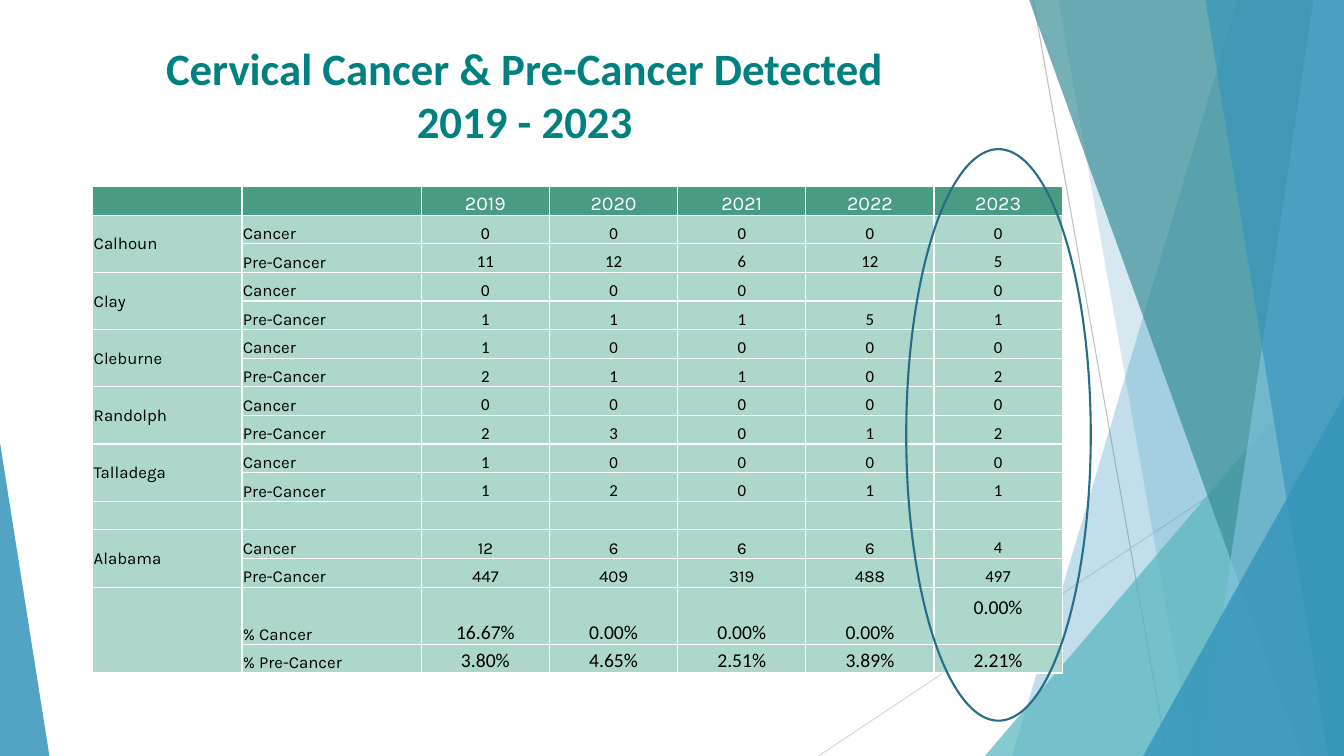
from dataclasses import dataclass

from lxml.etree import SubElement as Sub
from pptx import Presentation
from pptx.dml.color import RGBColor
from pptx.enum.shapes import MSO_CONNECTOR as Link, MSO_SHAPE as Kind
from pptx.enum.text import MSO_ANCHOR as Anchor, PP_ALIGN as Align
from pptx.oxml.ns import qn
from pptx.util import Emu, Inches, Pt

WIDE, HIGH = Inches(13.333), Inches(7.5)
BLUE, TEAL, DARK, PALE = "3494BA", "58B6C0", "3A8F98", "7FC1DB"
HEAD, BODY, WHITE = "4A9B83", "ACD7CA", "FFFFFF"


@dataclass
class Box:
    """Place and size as percent of the slide."""
    left: float
    top: float
    width: float
    height: float

    def emu(self) -> tuple:
        return across(self.left), down(self.top), across(self.width), down(self.height)


@dataclass
class Ray:
    start: tuple
    end: tuple
    color: str


@dataclass
class Panel:
    """Full-height band from a slanted left edge to the right side."""
    head: float
    foot: float
    color: str
    alpha: int


@dataclass
class Wedge:
    box: Box
    tip: int
    color: str
    alpha: int


def across(share: float) -> Emu:
    return Emu(round(WIDE * share / 100))


def down(share: float) -> Emu:
    return Emu(round(HIGH * share / 100))


def tint(code: str) -> RGBColor:
    return RGBColor.from_string(code)


def write(frame, text: str, size=12, font="Calibri", color="000000",
          bold=False, align=Align.LEFT) -> None:
    para = frame.paragraphs[0]
    para.alignment = align
    if not text:
        Sub(para._p, qn("a:endParaRPr"), sz=str(size * 100))
        return
    para.text = text
    for run in para.runs:
        run.font.size, run.font.name, run.font.bold = Pt(size), font, bold
        run.font.color.rgb = tint(color)


def paint(shape, color: str, alpha: int) -> None:
    shape.shadow.inherit = False
    shape.line.fill.background()
    shape.fill.solid()
    shape.fill.fore_color.rgb = tint(color)
    tone = shape.element.spPr.find(qn("a:solidFill"))[0]
    Sub(tone, qn("a:alpha"), val=str(alpha * 1000))


def draw_ray(shapes, ray: Ray) -> None:
    (x1, y1), (x2, y2) = ray.start, ray.end
    line = shapes.add_connector(Link.STRAIGHT, across(x1), down(y1), across(x2), down(y2))
    line.line.color.rgb = tint(ray.color)
    line.line.width = Pt(0.75)
    Sub(line.element.spPr, qn("a:effectLst"))


def draw_panel(shapes, panel: Panel) -> None:
    path = shapes.build_freeform(across(panel.head), 0)
    path.add_line_segments([(WIDE, 0), (WIDE, HIGH), (across(panel.foot), HIGH)], close=True)
    paint(path.convert_to_shape(), panel.color, panel.alpha)


def draw_wedge(shapes, wedge: Wedge) -> None:
    shape = shapes.add_shape(Kind.ISOSCELES_TRIANGLE, *wedge.box.emu())
    shape.adjustments[0] = wedge.tip
    paint(shape, wedge.color, wedge.alpha)


def style(cell, color: str) -> None:
    cell.margin_left = cell.margin_right = cell.margin_top = Inches(0.01)
    cell.margin_bottom = 0
    cell.vertical_anchor = Anchor.BOTTOM
    props = cell._tc.get_or_add_tcPr()
    for side in ("lnL", "lnR", "lnT", "lnB"):
        edge = Sub(props, qn(f"a:{side}"), w=str(Pt(1)))
        Sub(Sub(edge, qn("a:solidFill")), qn("a:srgbClr"), val=WHITE)
    cell.fill.solid()
    cell.fill.fore_color.rgb = tint(color)


def look(row: int, col: int, text: str) -> dict:
    """Text format by place in the table."""
    if row == 0:
        return dict(size=14, font="Karla", color=WHITE, align=Align.CENTER)
    if col < 2:
        return dict(font="Karla")
    state = row in STATE and col < 6
    return dict(size=14 if "%" in text else 12,
                font="Karla" if state else "Calibri", align=Align.CENTER)


# Backdrop, back to front
DECOR = [
    Ray((76.88, 0), (86.85, 100), "BFBFBF"),
    Ray((100, 53.73), (60.9, 100), "D9D9D9"),
    Panel(92.1, 75.3, BLUE, 30),
    Panel(78.75, 88.73, BLUE, 20),
    Wedge(Box(73.28, 44.4, 26.72, 55.6), 1, TEAL, 72),
    Panel(76.58, 96.83, DARK, 70),
    Panel(97.73, 89.4, PALE, 70),
    Panel(89.7, 98.85, BLUE, 65),
    Wedge(Box(85.05, 52.4, 14.95, 47.6), 1, BLUE, 80),
    Wedge(Box(0, 58.53, 3.68, 41.47), 0, BLUE, 85),
]
DRAW = {Ray: draw_ray, Panel: draw_panel, Wedge: draw_wedge}

# Table content
ROWS = [
    ["", "", "2019", "2020", "2021", "2022", "2023"],
    ["Calhoun", "Cancer", "0", "0", "0", "0", "0"],
    ["", "Pre-Cancer", "11", "12", "6", "12", "5"],
    ["Clay", "Cancer", "0", "0", "0", "", "0"],
    ["", "Pre-Cancer", "1", "1", "1", "5", "1"],
    ["Cleburne", "Cancer", "1", "0", "0", "0", "0"],
    ["", "Pre-Cancer", "2", "1", "1", "0", "2"],
    ["Randolph", "Cancer", "0", "0", "0", "0", "0"],
    ["", "Pre-Cancer", "2", "3", "0", "1", "2"],
    ["Talladega", "Cancer", "1", "0", "0", "0", "0"],
    ["", "Pre-Cancer", "1", "2", "0", "1", "1"],
    [""] * 7,
    ["Alabama", "Cancer", "12", "6", "6", "6", "4"],
    ["", "Pre-Cancer", "447", "409", "319", "488", "497"],
    ["", "% Cancer", "16.67%", "0.00%", "0.00%", "0.00%", "0.00%"],
    ["", "% Pre-Cancer", "3.80%", "4.65%", "2.51%", "3.89%", "2.21%"],
]
STATE, RATE = (12, 13), 14
PAIRS = (1, 3, 5, 7, 9, 12, RATE)
COLS = [11.1, 13.35] + [9.54] * 5
STEP = 3.79


def draw_table(shapes) -> None:
    box = Box(6.9, 24.67, sum(COLS), STEP * (len(ROWS) + 1))
    grid = shapes.add_table(len(ROWS), len(COLS), *box.emu()).table
    grid.first_row = grid.horz_banding = False
    for col, share in zip(grid.columns, COLS):
        col.width = across(share)
    for r, texts in enumerate(ROWS):
        grid.rows[r].height = down(STEP * (2 if r == RATE else 1))
        for c, text in enumerate(texts):
            cell = grid.cell(r, c)
            style(cell, BODY if r else HEAD)
            write(cell.text_frame, text, **look(r, c, text))
    for r in PAIRS:
        grid.cell(r, 0).merge(grid.cell(r + 1, 0))
        grid.cell(r, 0).vertical_anchor = Anchor.MIDDLE
    # The latest cancer rate sits one line higher
    grid.cell(RATE, 6).margin_bottom = Inches(0.24)


def main() -> None:
    deck = Presentation()
    deck.slide_width, deck.slide_height = WIDE, HIGH
    shapes = deck.slides.add_slide(deck.slide_layouts[6]).shapes
    for part in DECOR:
        DRAW[type(part)](shapes, part)

    # Title
    title = shapes.add_textbox(*Box(0.98, 4.67, 76.13, 15.2).emu()).text_frame
    title.word_wrap = True
    write(title, "Cervical Cancer & Pre-Cancer Detected\v2019 - 2023", size=32,
          color="008080", bold=True, align=Align.CENTER)

    draw_table(shapes)

    # Ring around the latest year
    ring = shapes.add_shape(Kind.OVAL, *Box(67.43, 19.73, 13.73, 75.6).emu())
    ring.shadow.inherit = False
    ring.fill.background()
    ring.line.color.rgb = tint("266D8A")
    ring.line.width = Pt(1.5)
    deck.save("out.pptx")


if __name__ == "__main__":
    main()
